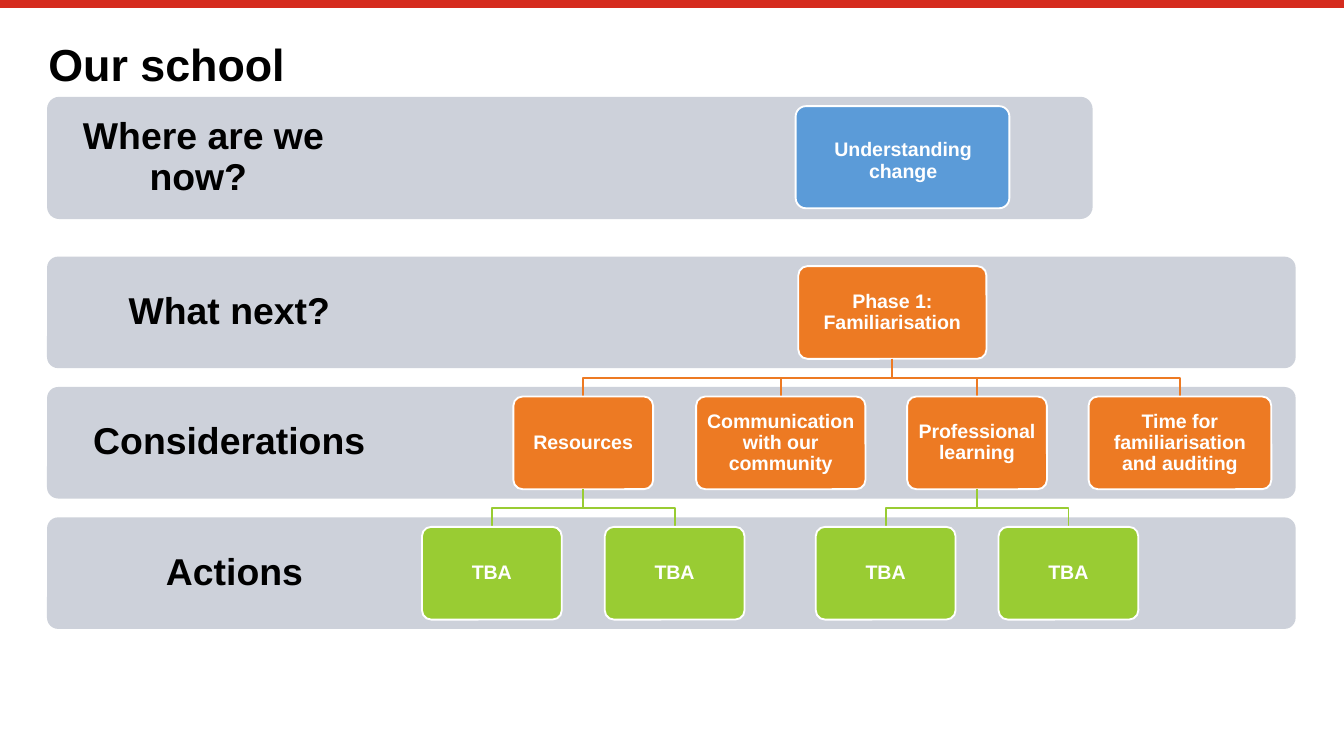
from lxml import etree
from pptx import Presentation
from pptx import util as u
from pptx.dml.color import RGBColor
from pptx.enum import shapes, text
from pptx.oxml.ns import qn

PX = 9144  # 100 px to the inch
WIDE = 1000
RED = RGBColor(0xD5, 0x2B, 0x1E)
GREY = RGBColor(0xCD, 0xD1, 0xDA)
BLUE = RGBColor(0x5B, 0x9B, 0xD8)
ORANGE = RGBColor(0xED, 0x7A, 0x23)
GREEN = RGBColor(0x99, 0xCC, 0x33)
WHITE = RGBColor(0xFF, 0xFF, 0xFF)
BLACK = RGBColor(0, 0, 0)

LEFT, LABEL = 35, 279
TOP, PITCH, BAND = 191, 97, 83
CARD, SMALL, INSET = 69, 104, 7
SPREAD = 68  # action centres, either side of their parent's centre


def write(shape, words, size=10.5, color=WHITE, align=text.PP_ALIGN.CENTER,
          pad=5):
    frame = shape.text_frame
    frame.word_wrap = True
    frame.auto_size = text.MSO_AUTO_SIZE.NONE
    frame.vertical_anchor = text.MSO_ANCHOR.MIDDLE
    frame.margin_left = frame.margin_right = pad * PX
    frame.margin_top = frame.margin_bottom = pad * PX
    para = frame.paragraphs[0]
    para.alignment = align
    para.line_spacing = 0.9
    run = para.add_run()
    run.text = words
    font = run.font
    font.name, font.size, font.bold = "Arial", u.Pt(size), True
    font.color.rgb = color


class Chart:
    """Holds the slide and the look of each kind of element."""

    def __init__(self, slide):
        self.slide = slide
        self.shapes = slide.shapes

    def title(self, words, *box):
        holder = self.shapes.title
        holder.left, holder.top, holder.width, holder.height = (
            n * PX for n in box)
        write(holder, words, size=24, color=BLACK, pad=0,
              align=text.PP_ALIGN.LEFT)

    def rule(self, y, width, color):
        line = self.shapes.add_connector(
            shapes.MSO_CONNECTOR.STRAIGHT, 0, y * PX, WIDE * PX, y * PX)
        line.line.color.rgb = color
        line.line.width = u.Pt(width)
        etree.SubElement(line._element.spPr, qn("a:effectLst"))

    def panel(self, fill, *box):
        shape = self.shapes.add_shape(
            shapes.MSO_SHAPE.ROUNDED_RECTANGLE, *(n * PX for n in box))
        shape.adjustments[0] = 0.1
        shape.shadow.inherit = False
        shape.fill.solid()
        shape.fill.fore_color.rgb = fill
        shape.line.fill.background()
        return shape

    def label(self, words, *box, **style):
        write(self.shapes.add_textbox(*(n * PX for n in box)), words, **style)

    def band(self, words, top, width, height, label=LABEL):
        self.panel(GREY, LEFT, top, width, height)
        self.label(words, LEFT, top, label, height,
                   size=20, color=BLACK, pad=16)

    def card(self, fill, *box):
        shape = self.panel(fill, *box)
        shape.line.color.rgb = WHITE
        shape.line.width = u.Pt(1)
        return shape

    def node(self, words, fill, mid, row, width=SMALL):
        top = TOP + INSET + row * PITCH
        write(self.card(fill, mid - width // 2, top, width, CARD), words)

    def branch(self, color, start, end, row):
        """Draw an elbow from a card in this row to one in the next."""
        top = TOP + INSET + CARD + row * PITCH
        low = TOP + INSET + (row + 1) * PITCH
        half = (top + low) // 2
        pen = self.shapes.build_freeform(start, top, scale=PX)
        pen.add_line_segments(
            [(start, half), (end, half), (end, low)], close=False)
        shape = pen.convert_to_shape()
        shape.shadow.inherit = False
        shape.fill.background()
        shape.line.color.rgb = color
        shape.line.width = u.Pt(1)


def main():
    deck = Presentation()
    deck.slide_width = WIDE * PX
    deck.slide_height = WIDE * PX * 9 // 16
    chart = Chart(deck.slides.add_slide(deck.slide_layouts[5]))
    chart.rule(3, 4.2, RED)
    chart.title("Our school", 36, 30, 929, 39)

    rows = ["What next? ", "Considerations ", "Actions"]
    for row, words in enumerate(rows):
        chart.band(words, TOP + row * PITCH, 929, BAND)

    root = 664
    chart.node("Phase 1: Familiarisation", ORANGE, root, 0, 140)
    topics = [
        ("Resources", 434, SMALL, ["TBA", "TBA"]),
        ("Communication with our community", 581, 126, []),
        ("Professional learning", 727, SMALL, ["TBA", "TBA"]),
        ("Time for familiarisation and auditing", 878, 136, []),
    ]
    for words, mid, width, actions in topics:
        chart.branch(ORANGE, root, mid, 0)
        chart.node(words, ORANGE, mid, 1, width)
        for side, action in zip((-1, 1), actions):
            spot = mid + side * SPREAD
            chart.branch(GREEN, mid, spot, 1)
            chart.node(action, GREEN, spot, 2)

    chart.band("Where are we now? ", 72, 778, 91, label=233)
    chart.card(BLUE, 592, 79, 159, 76)
    chart.label("Understanding change", 601, 90, 142, 60)
    deck.save("out.pptx")


if __name__ == "__main__":
    main()
